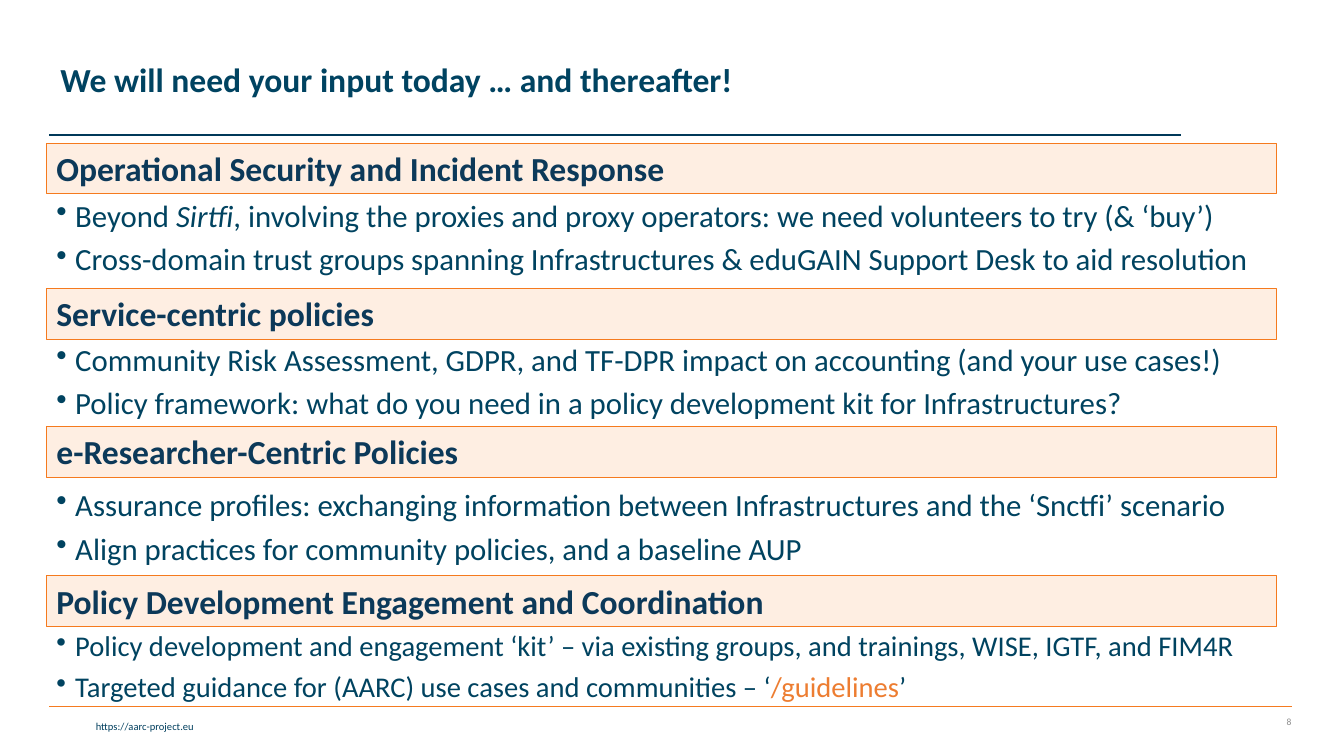
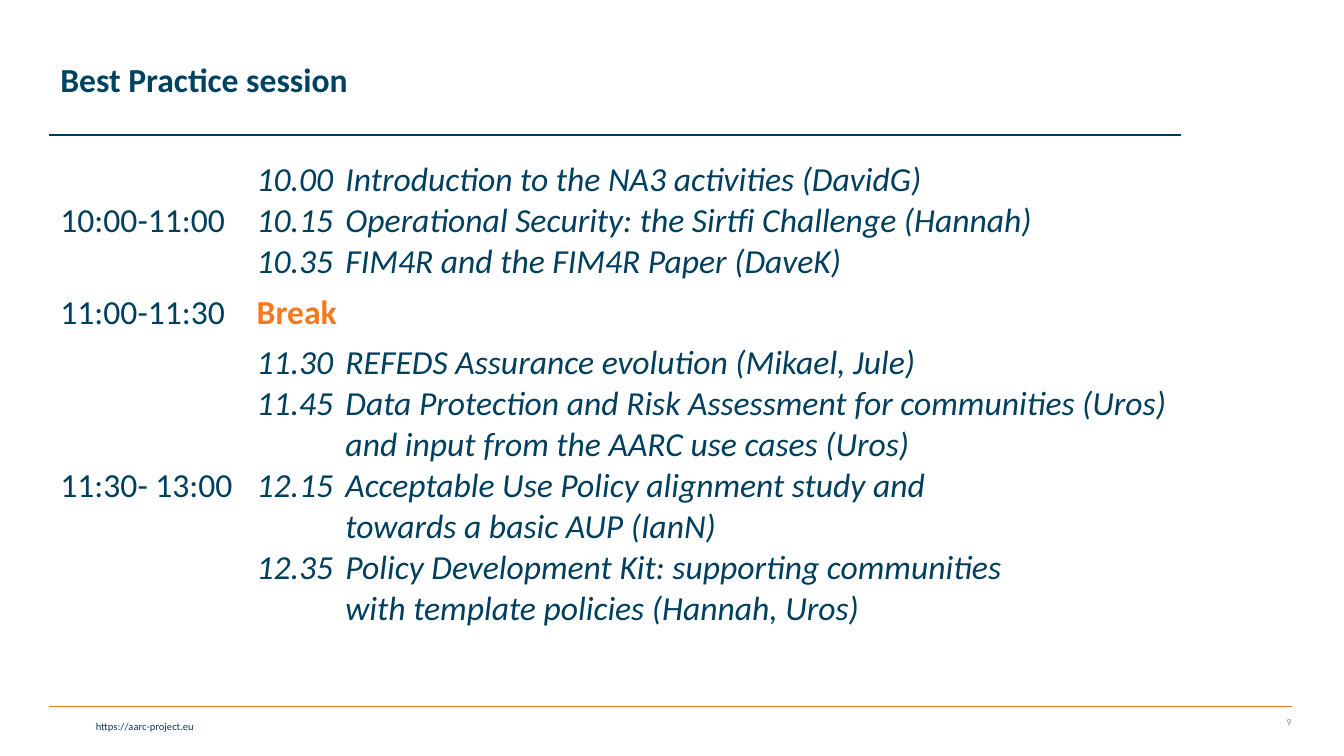
from dataclasses import dataclass

from lxml.etree import SubElement
from pptx import Presentation
from pptx.dml.color import RGBColor
from pptx.enum.shapes import MSO_CONNECTOR as CONN, MSO_SHAPE as SHAPE
from pptx.enum.text import MSO_ANCHOR as ANCHOR, PP_ALIGN as ALIGN
from pptx.oxml.ns import qn
from pptx.util import Pt


@dataclass(frozen=True)
class Theme:
    font: str = "Calibri"
    title: str = "004361"
    body: str = "004360"
    heading: str = "0C3959"
    table: str = "003F5E"
    number: str = "8C8C8C"
    title_rule: str = "003959"
    footer_rule: str = "F57B20"
    band_fill: str = "FEEEE2"
    band_line: str = "F57A1E"
    pause: str = "F6791C"
    link: str = "ED7D31"
    large: float = 24
    bullet: float = 22
    small_bullet: float = 20.4
    footer: float = 7.5
    page: float = 6.8


T = Theme()


def rgb(value):
    return RGBColor.from_string(value)


def write(tf, text, size=T.large, color=T.body, bold=False, italic=False,
          align=ALIGN.LEFT, spacing=None, before=0, bullet=None, indent=0, tab=None):
    first = tf.paragraphs[0]
    p = tf.add_paragraph() if first.runs else first
    pPr = p._p.get_or_add_pPr()
    if bullet:
        pPr.set("marL", str(Pt(indent)))
        pPr.set("indent", str(-Pt(indent)))
        SubElement(pPr, qn("a:buChar"), char=bullet)
    if tab:
        tabs = SubElement(pPr, qn("a:tabLst"))
        SubElement(tabs, qn("a:tab"), pos=str(Pt(tab)), algn="l")
    p.alignment = align
    p.space_before = Pt(before if p is not first else 0)
    if spacing:
        p.line_spacing = spacing
    for part in [text] if isinstance(text, str) else text:
        words, over = (part, {}) if isinstance(part, str) else part
        for i, line in enumerate(words.split("\n")):
            if i:
                p.add_line_break()
            r = p.add_run()
            r.text = line
            r.font.name = T.font
            r.font.size = Pt(size)
            r.font.bold = bold
            r.font.italic = over.get("italic", italic)
            r.font.color.rgb = rgb(over.get("color", color))


class Deck:
    def __init__(self):
        self.prs = Presentation()
        self.prs.slide_width, self.prs.slide_height = Pt(960), Pt(540)
        self.s = None

    def slide(self, title, number):
        self.s = self.prs.slides.add_slide(self.prs.slide_layouts[6])
        self.rule(35.3, 923, 504.7, T.footer_rule)
        write(self.text(2.2, 510.5, 143.3, 16.6), "https://aarc-project.eu",
              size=T.footer, color=T.table, align=ALIGN.RIGHT)
        self.rule(35.3, 843.8, 96.5, T.title_rule)
        write(self.text(871.2, 504.7, 58.3, 21.6, ANCHOR.MIDDLE), str(number),
              size=T.page, color=T.number, align=ALIGN.RIGHT)
        write(self.text(36, 5.8, 756.7, 104.4, ANCHOR.MIDDLE), title,
              color=T.title, bold=True, spacing=0.9)

    def rule(self, left, right, y, color):
        line = self.s.shapes.add_connector(CONN.STRAIGHT, Pt(left), Pt(y), Pt(right), Pt(y))
        line.line.color.rgb = rgb(color)
        line.line.width = Pt(1)
        SubElement(line._element.spPr, qn("a:effectLst"))

    def text(self, x, y, w, h, anchor=ANCHOR.TOP):
        tf = self.s.shapes.add_textbox(Pt(x), Pt(y), Pt(w), Pt(h)).text_frame
        tf.word_wrap = True
        tf.vertical_anchor = anchor
        return tf

    def band(self, x, y, w, h, heading):
        sp = self.s.shapes.add_shape(SHAPE.RECTANGLE, Pt(x), Pt(y), Pt(w), Pt(h))
        sp.shadow.inherit = False
        sp.fill.solid()
        sp.fill.fore_color.rgb = rgb(T.band_fill)
        sp.line.color.rgb = rgb(T.band_line)
        sp.line.width = Pt(0.75)
        sp.text_frame.vertical_anchor = ANCHOR.TOP
        write(sp.text_frame, heading, color=T.heading, bold=True)

    def bullets(self, x, y, w, h, items, size):
        tf = self.text(x, y, w, h)
        for item in items:
            write(tf, item, size=size, spacing=0.9, before=7.5, bullet="•", indent=13.5)

    def agenda(self, x, y, widths, rows):
        heights = [height for height, _, _ in rows]
        tbl = self.s.shapes.add_table(len(rows), len(widths), Pt(x), Pt(y),
                                      Pt(sum(widths)), Pt(sum(heights))).table
        tbl.first_row = tbl.horz_banding = False
        for col, width in zip(tbl.columns, widths):
            col.width = Pt(width)
        for row, (height, time, items) in zip(tbl.rows, rows):
            row.height = Pt(height)
            for cell in row.cells:
                cell.fill.background()
                cell.vertical_anchor = ANCHOR.MIDDLE
            slot, topics = (cell.text_frame for cell in row.cells)
            write(slot, time, color=T.table)
            if isinstance(items, str):
                write(topics, items, color=T.pause, bold=True)
            else:
                for item in items:
                    write(topics, "\t".join(item), color=T.table, italic=True, tab=63.4)


SECTIONS = [
    (102.2, 139.7, T.bullet, "Operational Security and Incident Response", [
        ["Beyond ", ("Sirtfi", {"italic": True}),
         ", involving the proxies and proxy operators: we need volunteers to try (& ‘buy’)"],
        "Cross-domain trust groups spanning Infrastructures & eduGAIN Support Desk to aid resolution",
    ]),
    (205.9, 242.6, T.bullet, "Service-centric policies", [
        "Community Risk Assessment, GDPR, and TF-DPR impact on accounting (and your use cases!)",
        "Policy framework: what do you need in a policy development kit for Infrastructures?",
    ]),
    (304.6, 346.3, T.bullet, "e-Researcher-Centric Policies", [
        "Assurance profiles: exchanging information between Infrastructures and the ‘Snctfi’ scenario",
        "Align practices for community policies, and a baseline AUP",
    ]),
    (411.1, 447.8, T.small_bullet, "Policy Development Engagement and Coordination", [
        "Policy development and engagement ‘kit’ – via existing groups, and trainings, "
        "WISE, IGTF, and FIM4R",
        ["Targeted guidance for (AARC) use cases and communities – ‘",
         ("/guidelines", {"color": T.link}), "’"],
    ]),
]

SESSIONS = [
    (95, "10:00-11:00", [
        ("10.00", "Introduction to the NA3 activities (DavidG)"),
        ("10.15", "Operational Security: the Sirtfi Challenge (Hannah)"),
        ("10.35", "FIM4R and the FIM4R Paper (DaveK)"),
    ]),
    (36, "11:00-11:30", "Break"),
    (212, "11:30- 13:00", [
        ("11.30", "REFEDS Assurance evolution (Mikael, Jule)"),
        ("11.45", "Data Protection and Risk Assessment for communities (Uros)\n",
         "and input from the AARC use cases (Uros)"),
        ("12.15", "Acceptable Use Policy alignment study and\n", "towards a basic AUP (IanN)"),
        ("12.35", "Policy Development Kit: supporting communities\n",
         "with template policies (Hannah, Uros)"),
    ]),
]


def main():
    deck = Deck()

    deck.slide("We will need your input today … and thereafter!", 8)
    for band_y, list_y, size, heading, items in SECTIONS:
        deck.band(33.2, band_y, 878.4, 36.4, heading)
        deck.bullets(33.2, list_y, 878.4, 66, items, size)

    deck.slide("Best Practice session", 9)
    deck.agenda(36, 110.2, (140.2, 719), SESSIONS)

    deck.prs.save("out.pptx")


if __name__ == "__main__":
    main()
